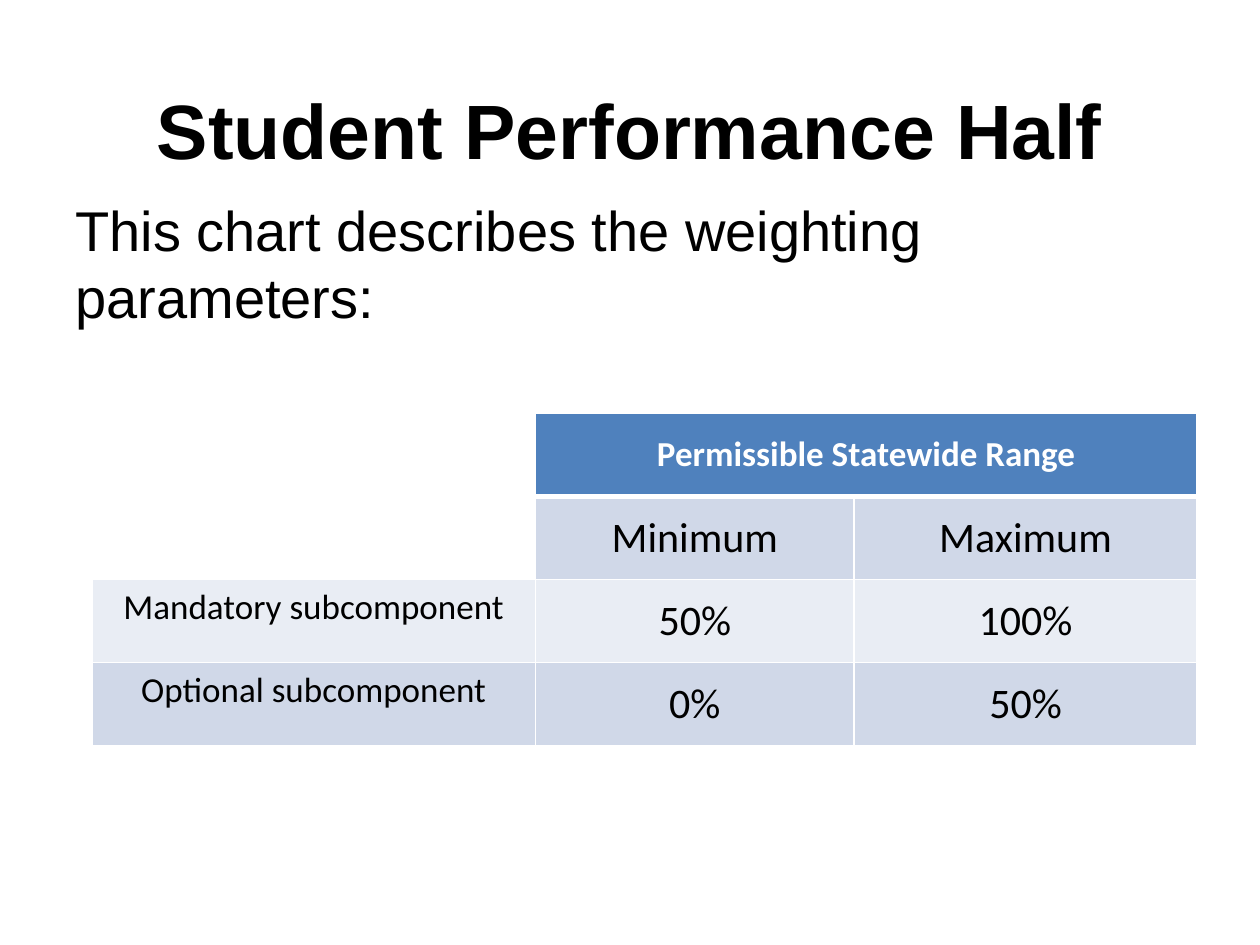
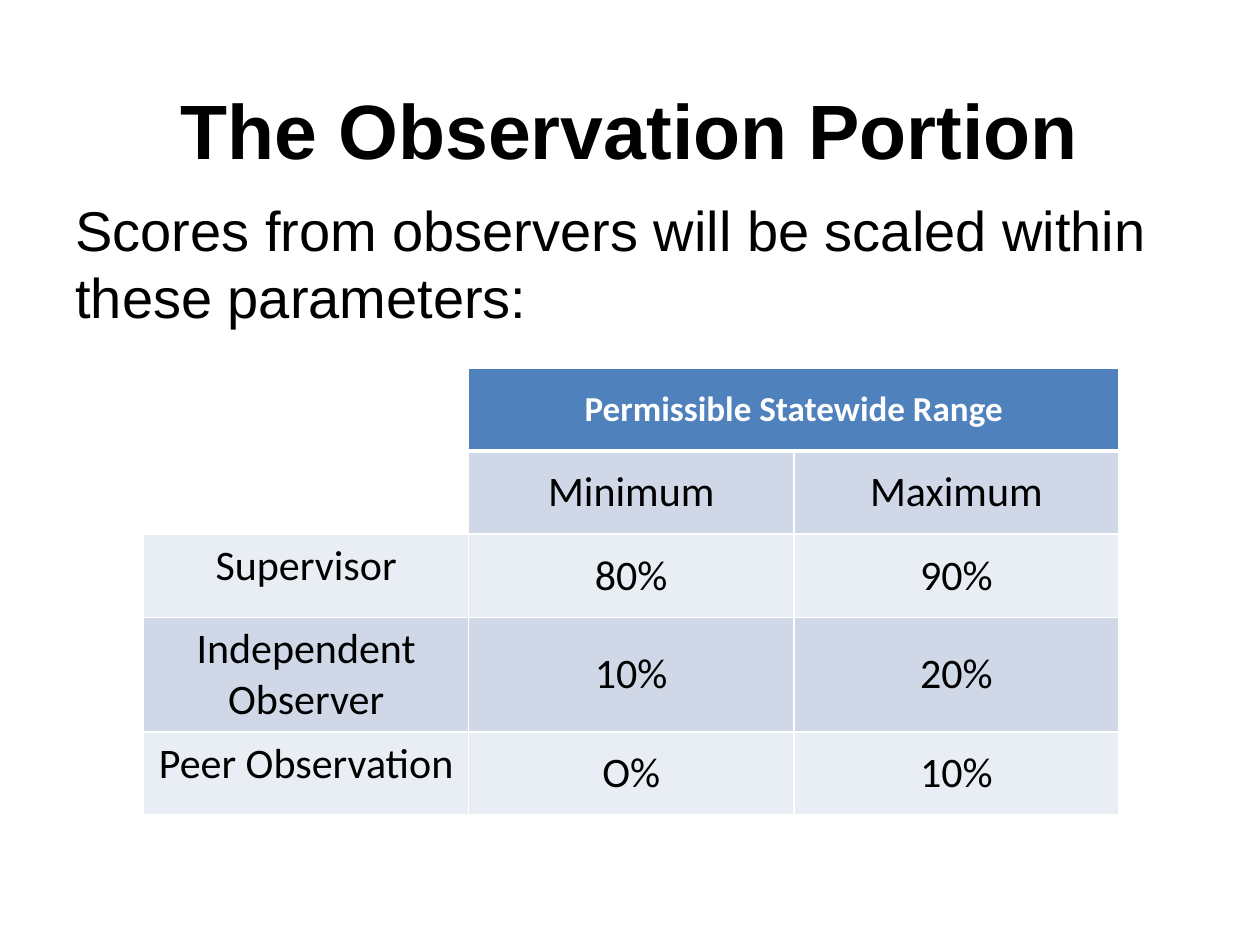
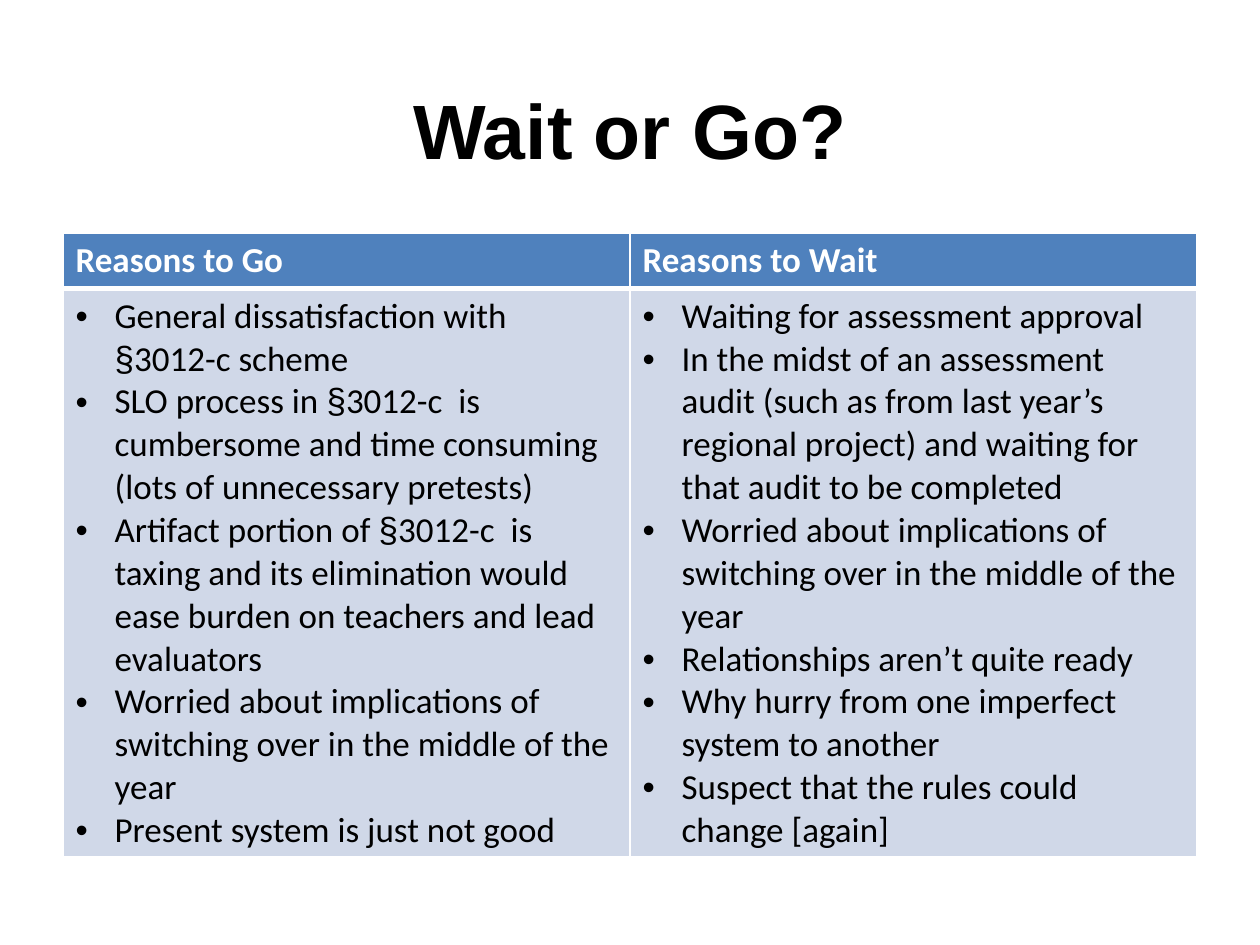
from lxml import etree
from pptx import Presentation
from pptx.dml.color import RGBColor
from pptx.enum.text import MSO_ANCHOR, PP_ALIGN
from pptx.oxml.ns import qn
from pptx.util import Inches, Pt

BLACK = RGBColor(0x00, 0x00, 0x00)
WHITE = RGBColor(0xFF, 0xFF, 0xFF)
HEADER_BLUE = RGBColor(0x4F, 0x81, 0xBD)
BAND_DARK = RGBColor(0xD0, 0xD8, 0xE8)
BAND_LIGHT = RGBColor(0xE9, 0xED, 0xF4)

LEFT, CENTER = PP_ALIGN.LEFT, PP_ALIGN.CENTER
TOP, MIDDLE = MSO_ANCHOR.TOP, MSO_ANCHOR.MIDDLE

HEADING_FONT = "Arial"
TABLE_FONT = "Calibri"
SECTION_SIGN = "§"
THIN, THICK = Pt(1), Pt(3)

REASONS_TO_GO = [
    "General dissatisfaction with\n§3012-c scheme",
    "SLO process in §3012-c  is cumbersome and time consuming (lots of unnecessary pretests)",
    "Artifact portion of §3012-c  is taxing and its elimination would ease burden on teachers and lead evaluators",
    "Worried about implications of switching over in the middle of the year",
    "Present system is just not good",
]
REASONS_TO_WAIT = [
    "Waiting for assessment approval",
    "In the midst of an assessment audit (such as from last year’s regional project) and waiting for that audit to be completed",
    "Worried about implications of switching over in the middle of the year",
    "Relationships aren’t quite ready",
    "Why hurry from one imperfect system to another",
    "Suspect that the rules could change [again]",
]


class Deck:
    def __init__(self):
        self.presentation = Presentation()
        self.presentation.slide_width = Inches(10)
        self.presentation.slide_height = Inches(7.5)
        self.slide = None

    def new_slide(self, title):
        self.slide = self.presentation.slides.add_slide(self.presentation.slide_layouts[6])
        self.text_box(title, 0.4, 1.25, 44, bold=True, align=CENTER, anchor=MIDDLE)

    def add_run(self, paragraph, text, size, font, color=BLACK, bold=False):
        run = paragraph.add_run()
        run.text = text
        run.font.size = Pt(size)
        run.font.name = font
        run.font.bold = bold
        run.font.color.rgb = color

    def text_box(self, text, top, height, size, bold=False, align=LEFT, anchor=TOP):
        box = self.slide.shapes.add_textbox(Inches(0.5), Inches(top), Inches(9), Inches(height))
        frame = box.text_frame
        frame.word_wrap = True
        frame.vertical_anchor = anchor
        paragraph = frame.paragraphs[0]
        paragraph.alignment = align
        self.add_run(paragraph, text, size, HEADING_FONT, bold=bold)

    def intro(self, text):
        self.text_box(text, 1.5, 1.3, 32)

    def table(self, left, top, widths, heights):
        frame = self.slide.shapes.add_table(
            len(heights), len(widths), Inches(left), Inches(top),
            Inches(sum(widths)), Inches(sum(heights)))
        table = frame.table
        table.horz_banding = False
        for column, width in zip(table.columns, widths):
            column.width = Inches(width)
        for row, height in zip(table.rows, heights):
            row.height = Inches(height)
        return table

    def style_cell(self, table, row, column, fill):
        cell = table.cell(row, column)
        edges = {
            "a:lnL": THIN,
            "a:lnR": THIN,
            "a:lnT": THICK if row == 1 else THIN,
            "a:lnB": THICK if row == 0 else THIN,
        }
        properties = cell._tc.get_or_add_tcPr()
        for tag, width in edges.items():
            line = etree.SubElement(properties, qn(tag), w=str(width))
            solid = etree.SubElement(line, qn("a:solidFill"))
            etree.SubElement(solid, qn("a:srgbClr"), val=str(WHITE))
        cell.fill.solid()
        cell.fill.fore_color.rgb = fill
        return cell

    def cell_text(self, cell, text, size, color=BLACK, bold=False, align=CENTER, anchor=MIDDLE):
        cell.vertical_anchor = anchor
        paragraph = cell.text_frame.paragraphs[0]
        paragraph.alignment = align
        self.add_run(paragraph, text, size, TABLE_FONT, color, bold)

    def bullets(self, cell, items):
        frame = cell.text_frame
        for index, item in enumerate(items):
            paragraph = frame.add_paragraph() if index else frame.paragraphs[0]
            properties = paragraph._p.get_or_add_pPr()
            indent = Inches(0.31)
            properties.set("marL", str(indent))
            properties.set("indent", str(-indent))
            etree.SubElement(properties, qn("a:buFont"), typeface=HEADING_FONT)
            etree.SubElement(properties, qn("a:buChar"), char="•")
            for part in item.partition(SECTION_SIGN):
                font = HEADING_FONT if part == SECTION_SIGN else TABLE_FONT
                text = part.rstrip("\n")
                if text:
                    self.add_run(paragraph, text, 20, font)
                if text != part:
                    paragraph.add_line_break()

    def range_table(self, left, top, widths, heights, label_size, ranges):
        table = self.table(left, top, widths, heights)
        rows = [("", "Permissible Statewide Range", ""), ("", "Minimum", "Maximum"), *ranges]
        for row, texts in enumerate(rows):
            band = BAND_DARK if row % 2 else BAND_LIGHT
            for column, text in enumerate(texts):
                is_label = column == 0
                if is_label and row < 2:
                    fill = WHITE
                else:
                    fill = band if row else HEADER_BLUE
                cell = self.style_cell(table, row, column, fill)
                if not text:
                    continue
                if row == 0:
                    self.cell_text(cell, text, 20, WHITE, bold=True)
                elif is_label:
                    self.cell_text(cell, text, label_size, anchor=TOP)
                else:
                    self.cell_text(cell, text, 24)
        table.cell(0, 1).merge(table.cell(0, 2))

    def reasons_table(self, columns):
        table = self.table(0.5, 1.85, [4.5] * len(columns), [0.44, 4.51])
        for column, (heading, reasons) in enumerate(columns):
            header = self.style_cell(table, 0, column, HEADER_BLUE)
            self.cell_text(header, heading, 20, WHITE, bold=True, align=LEFT, anchor=TOP)
            self.bullets(self.style_cell(table, 1, column, BAND_DARK), reasons)


def main():
    deck = Deck()

    deck.new_slide("Student Performance Half")
    deck.intro("This chart describes the weighting parameters:")
    deck.range_table(0.73, 3.28, [3.52, 2.53, 2.72], [0.66] * 4, 20, [
        ("Mandatory subcomponent", "50%", "100%"),
        ("Optional subcomponent", "0%", "50%"),
    ])

    deck.new_slide("The Observation Portion")
    deck.intro("Scores from observers will be scaled within these parameters:")
    deck.range_table(1.14, 2.92, [2.58] * 3, [0.66, 0.66, 0.66, 0.91, 0.66], 24, [
        ("Supervisor", "80%", "90%"),
        ("Independent Observer", "10%", "20%"),
        ("Peer Observation", "O%", "10%"),
    ])

    deck.new_slide("Wait or Go?")
    deck.reasons_table([
        ("Reasons to Go", REASONS_TO_GO),
        ("Reasons to Wait", REASONS_TO_WAIT),
    ])

    deck.presentation.save("out.pptx")


if __name__ == "__main__":
    main()
